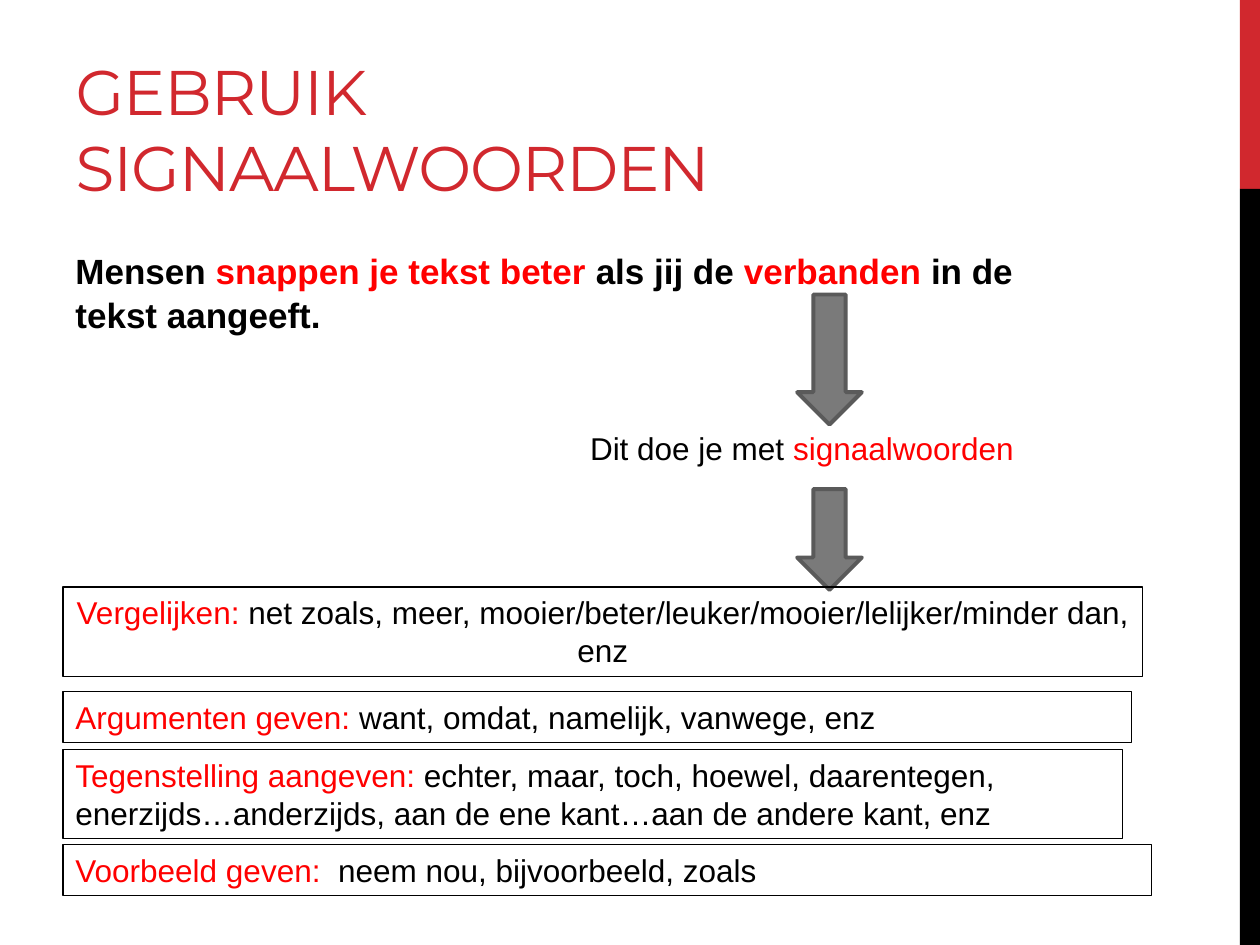
from pptx import Presentation
from pptx import util as u
from pptx.dml.color import RGBColor
from pptx.enum import shapes, text

BRAND_RED = RGBColor(0xD1, 0x28, 0x2E)
RED = RGBColor(0xFF, 0x00, 0x00)
BLACK = RGBColor(0x00, 0x00, 0x00)
GREY = RGBColor(0x7A, 0x7A, 0x7A)
DARK_GREY = RGBColor(0x5A, 0x5A, 0x5A)
LEFT = 36


def write(box, spans, font="Arial", size=18, bold=False, align=text.PP_ALIGN.LEFT,
          anchor=text.MSO_ANCHOR.TOP, tracking=0, line_spacing=1.0):
    """Fill a box with one paragraph made of (wording, colour) spans."""
    frame = box.text_frame
    frame.word_wrap = True
    frame.auto_size = text.MSO_AUTO_SIZE.NONE
    frame.vertical_anchor = anchor
    para = frame.paragraphs[0]
    para.alignment = align
    para.line_spacing = line_spacing
    for wording, colour in spans:
        span = para.add_run()
        span.text = wording
        span.font.name = font
        span.font.size = u.Pt(size)
        span.font.bold = bold
        span.font.color.rgb = colour
        if tracking:
            span.font._element.set("spc", str(round(tracking * 100)))


class SlideBuilder:
    def __init__(self, deck):
        self.page = deck.slides.add_slide(deck.slide_layouts[5])

    def shape(self, kind, left, top, width, height, fill=None, line=None, weight=0.75):
        box = self.page.shapes.add_shape(kind, *map(u.Pt, (left, top, width, height)))
        box.shadow.inherit = False
        if fill is None:
            box.fill.background()
        else:
            box.fill.solid()
            box.fill.fore_color.rgb = fill
        if line is None:
            box.line.fill.background()
        else:
            box.line.color.rgb = line
            box.line.width = u.Pt(weight)
        return box

    def bar(self, top, height, colour):
        self.shape(shapes.MSO_SHAPE.RECTANGLE, 708.5, top, 11.5, height, fill=colour)

    def title(self, wording):
        box = self.page.shapes.title
        box.left, box.top, box.width, box.height = map(u.Pt, (LEFT, 12, 456, 108))
        write(box, [(wording, BRAND_RED)], font="Montserrat", size=36,
              anchor=text.MSO_ANCHOR.BOTTOM, tracking=-0.6)

    def label(self, left, top, width, height, spans, **style):
        box = self.page.shapes.add_textbox(*map(u.Pt, (left, top, width, height)))
        write(box, spans, **style)

    def arrow(self, top, height):
        self.shape(shapes.MSO_SHAPE.DOWN_ARROW, 455.5, top, 37, height,
                   fill=GREY, line=DARK_GREY, weight=2.25)

    def signal_box(self, top, width, height, heading, examples, **style):
        box = self.shape(shapes.MSO_SHAPE.RECTANGLE, LEFT, top, width, height, line=BLACK)
        write(box, [(heading, RED), (examples, BLACK)], **style)


def main():
    deck = Presentation()
    deck.slide_width, deck.slide_height = u.Pt(720), u.Pt(540)
    slide = SlideBuilder(deck)

    # Side bars and title
    slide.bar(0, 108, BRAND_RED)
    slide.bar(108, 432, BLACK)
    slide.title("GEBRUIK SIGNAALWOORDEN")

    # Main statement, leading down to the signal words
    slide.label(LEFT, 138, 600, 344, [
        ("Mensen ", BLACK), ("snappen je tekst beter ", RED), ("als jij de ", BLACK),
        ("verbanden ", RED), ("in de tekst aangeeft.", BLACK),
    ], size=20, bold=True, line_spacing=1.05)
    slide.arrow(168.3, 74.3)
    slide.label(283, 241.5, 345.5, 29, [(" Dit doe je met ", BLACK), ("signaalwoorden", RED)],
                align=text.PP_ALIGN.CENTER)
    slide.arrow(279.5, 57.6)

    # Signal words by purpose
    slide.signal_box(335.5, 617, 51, "Vergelijken: ",
                     "net zoals, meer, mooier/beter/leuker/mooier/lelijker/minder dan, enz",
                     align=text.PP_ALIGN.CENTER)
    slide.signal_box(395.3, 610.8, 29, "Argumenten geven: ",
                     "want, omdat, namelijk, vanwege, enz")
    slide.signal_box(428.3, 605.5, 51, "Tegenstelling aangeven: ",
                     "echter, maar, toch, hoewel, daarentegen, enerzijds…anderzijds, "
                     "aan de ene kant…aan de andere kant, enz")
    slide.signal_box(482.6, 622, 29, "Voorbeeld geven:  ", "neem nou, bijvoorbeeld, zoals")

    deck.save("out.pptx")


if __name__ == "__main__":
    main()
